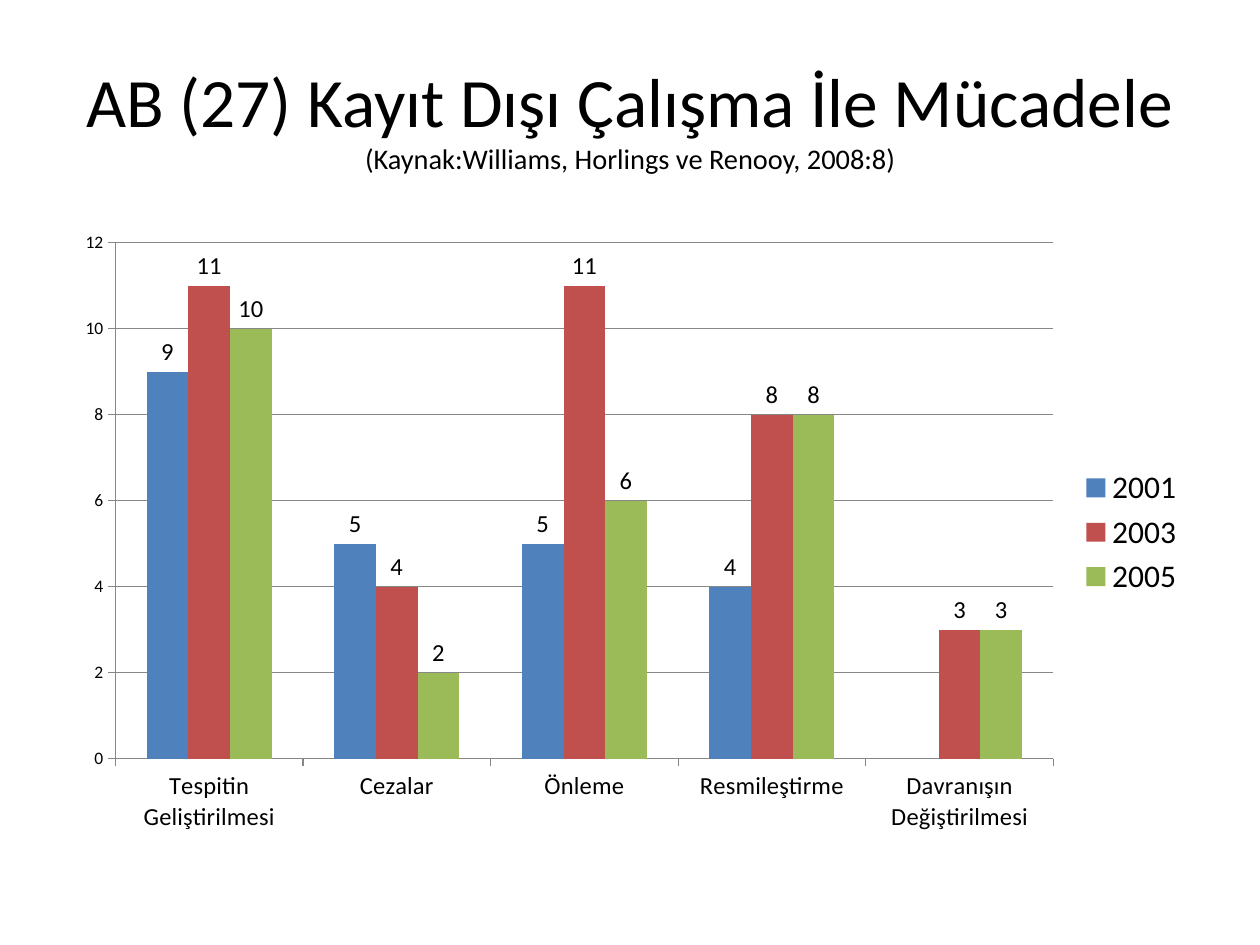
import pptx
import pptx.util
import pptx.chart.data
import pptx.dml.color
import pptx.enum.chart
import pptx.enum.text

Inches = pptx.util.Inches
FONT = "Calibri"
BLACK = "000000"
GREY = "878787"
TITLE_RUNS = [
    ("AB (27) Kayıt Dışı Çalışma İle Mücadele ", 39.6),
    ("(Kaynak:Williams, Horlings ve Renooy, 2008:8)", 16.2),
]
CATEGORIES = [
    "Tespitin Geliştirilmesi",
    "Cezalar",
    "Önleme",
    "Resmileştirme",
    "Davranışın Değiştirilmesi",
]
SERIES = [
    ("2001", (9, 5, 5, 4, None), "4F81BD"),
    ("2003", (11, 4, 11, 8, 3), "C0504D"),
    ("2005", (10, 2, 6, 8, 3), "9BBB59"),
]


def color(value):
    return pptx.dml.color.RGBColor.from_string(value)


def format_font(font, size, fill=BLACK):
    font.name = FONT
    font.size = pptx.util.Pt(size)
    font.bold = False
    font.color.rgb = color(fill)


def add_text(para, text, size, fill=BLACK):
    span = para.add_run()
    span.text = text
    format_font(span.font, size, fill)


def format_line(line):
    line.color.rgb = color(GREY)
    line.width = pptx.util.Pt(0.75)


def add_title(page):
    title = page.shapes.title
    title.left, title.top = Inches(0.5), Inches(0.3)
    title.width, title.height = Inches(9), Inches(1.25)
    frame = title.text_frame
    frame.word_wrap = True
    frame.auto_size = pptx.enum.text.MSO_AUTO_SIZE.NONE
    frame.vertical_anchor = pptx.enum.text.MSO_ANCHOR.MIDDLE
    para = frame.paragraphs[0]
    para.alignment = pptx.enum.text.PP_ALIGN.CENTER
    for text, size in TITLE_RUNS:
        add_text(para, text, size)


def add_column_chart(page):
    data = pptx.chart.data.CategoryChartData()
    data.categories = CATEGORIES
    for name, values, fill in SERIES:
        data.add_series(name, values)
    chart = page.shapes.add_chart(
        pptx.enum.chart.XL_CHART_TYPE.COLUMN_CLUSTERED,
        Inches(0.5), Inches(1.75), Inches(9), Inches(4.95), data,
    ).chart
    format_font(chart.font, 10)
    chart.has_title = False
    chart.has_legend = True
    chart.legend.position = pptx.enum.chart.XL_LEGEND_POSITION.RIGHT
    chart.legend.include_in_layout = False
    format_font(chart.legend.font, 18)

    for axis, size in ((chart.category_axis, 14), (chart.value_axis, 10)):
        axis.major_tick_mark = pptx.enum.chart.XL_TICK_MARK.OUTSIDE
        axis.minor_tick_mark = pptx.enum.chart.XL_TICK_MARK.NONE
        format_font(axis.tick_labels.font, size)
        format_line(axis.format.line)
    chart.value_axis.has_major_gridlines = True
    format_line(chart.value_axis.major_gridlines.format.line)

    plot = chart.plots[0]
    plot.gap_width = 150
    plot.overlap = 0
    plot.vary_by_categories = False
    for series, (name, values, fill) in zip(plot.series, SERIES):
        series.format.fill.solid()
        series.format.fill.fore_color.rgb = color(fill)
        labels = series.data_labels
        labels.show_value = True
        labels.position = pptx.enum.chart.XL_LABEL_POSITION.OUTSIDE_END
        format_font(labels.font, 14)


def main():
    deck = pptx.Presentation()
    deck.slide_width, deck.slide_height = Inches(10), Inches(7.5)
    page = deck.slides.add_slide(deck.slide_layouts.get_by_name("Title Only"))
    add_title(page)
    add_column_chart(page)
    deck.save("out.pptx")


if __name__ == "__main__":
    main()
